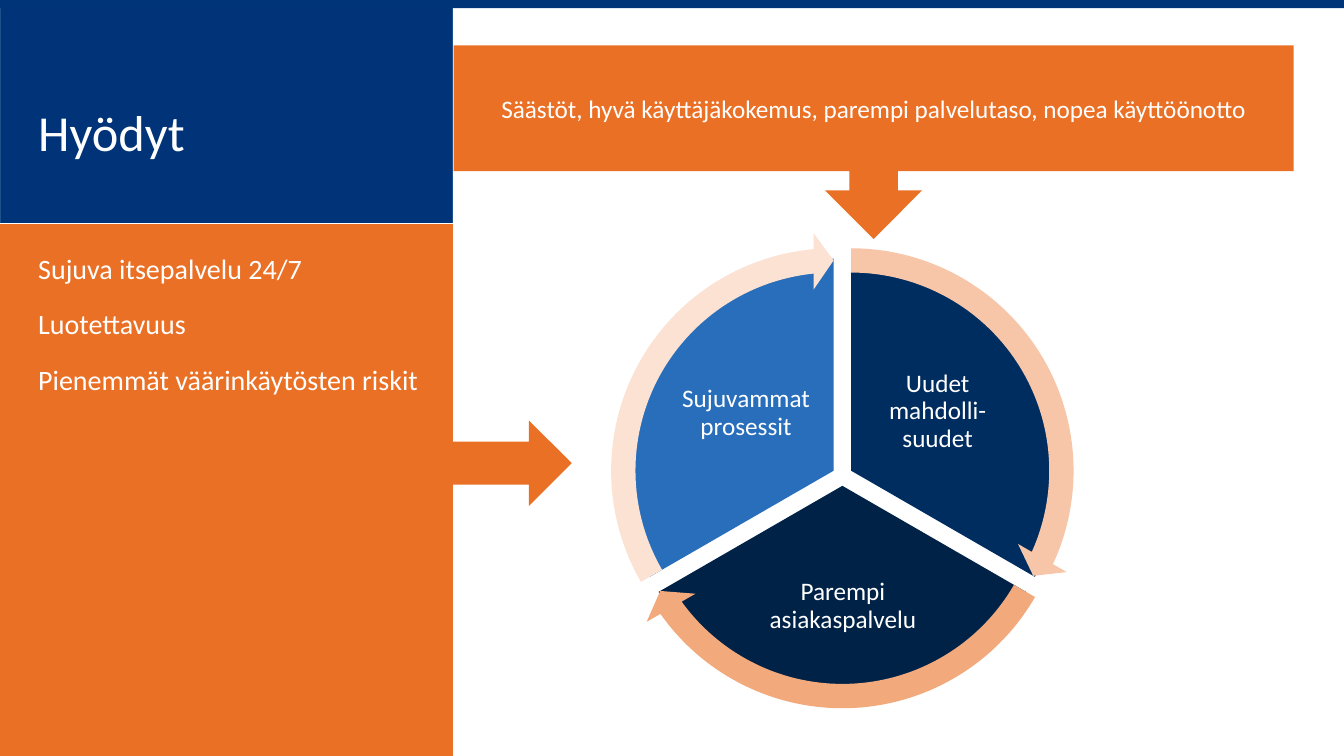
import dataclasses
import math
import typing

import lxml.etree
import pptx
import pptx.dml.color
import pptx.enum.shapes
import pptx.enum.text
import pptx.oxml.ns
import pptx.util

PRESET = pptx.enum.shapes.MSO_SHAPE
ALIGN = pptx.enum.text.PP_ALIGN
ANCHOR = pptx.enum.text.MSO_ANCHOR

SLIDE_WIDTH = pptx.util.Inches(13.33)
SLIDE_HEIGHT = pptx.util.Inches(7.5)
COLUMN = SLIDE_WIDTH / 133.3
ROW = SLIDE_HEIGHT / 75
SIDEBAR = 44.9
TITLE_ROWS = 22.2
WHEEL_COLUMN, WHEEL_ROW = 83.55, 47.2
SLICE_GAP = 1
SLICE_SIZE, ARROW_SIZE = 42.1, 47.3
SLICE_SWEEP = 120
ANGLE_UNIT = 0.6
RING_THICKNESS, HEAD_ANGLE, HEAD_WIDTH = 0.051, 3.275, 0.059


@dataclasses.dataclass(frozen=True)
class Theme:
    font: str = "Calibri"
    title_size: int = 36
    body_size: int = 20
    label_size: int = 18
    line_width: int = 1
    white: str = "FFFFFF"
    navy: str = "003378"
    navy_edge: str = "1E518A"
    top_band: str = "003479"
    orange: str = "EA7025"


THEME = Theme()


class Area(typing.NamedTuple):
    column: float
    row: float
    columns: float
    rows: float


class Panel(typing.NamedTuple):
    preset: PRESET
    area: Area
    fill: str
    line: typing.Optional[str] = None


class Writing(typing.NamedTuple):
    lines: tuple[str, ...]
    size: int
    align: ALIGN = ALIGN.LEFT
    anchor: ANCHOR = ANCHOR.TOP
    spacing: float = 0.9
    insets: tuple[float, float, float, float] = (0.1, 0.05, 0.1, 0.05)


class Slice(typing.NamedTuple):
    label: str
    label_area: Area
    label_insets: tuple[float, float, float, float]
    start: int
    fill: str
    arrow_fill: str


SIDE_PANELS = (
    Panel(PRESET.RECTANGLE, Area(0, 0, SIDEBAR, TITLE_ROWS), THEME.navy, THEME.navy_edge),
    Panel(PRESET.RECTANGLE, Area(0, TITLE_ROWS, SIDEBAR, 75 - TITLE_ROWS), THEME.orange, THEME.orange),
)
TOP_BAND = Panel(PRESET.RECTANGLE, Area(0, 0, 133.3, 0.8), THEME.top_band)
CALLOUT = Panel(PRESET.DOWN_ARROW_CALLOUT, Area(45, 4.5, 83.3, 19.2), THEME.orange)
SIDE_ARROW = Panel(PRESET.RIGHT_ARROW, Area(42.5, 41.7, 14.2, 8.5), THEME.orange)

SLICES = (
    Slice("Uudet mahdolli-suudet", Area(85.5, 34.6, 15, 12.5), (0, 0, 0, 0),
          270, "002D5F", "F7C6A8"),
    Slice("Parempi asiakaspalvelu", Area(72.5, 54.5, 22.5, 11), (0, 0.03, 0.03, 0),
          30, "002247", "F2A97C"),
    Slice("Sujuvammat prosessit", Area(66.5, 34.6, 15, 12.5), (0.03, 0.03, 0.03, 0),
          150, "296EBB", "FBE2D3"),
)


def colour(code: str) -> pptx.dml.color.RGBColor:
    return pptx.dml.color.RGBColor.from_string(code)


def place(area: Area) -> tuple[int, int, int, int]:
    return (round(area.column * COLUMN), round(area.row * ROW),
            round(area.columns * COLUMN), round(area.rows * ROW))


def draw_panel(page, panel: Panel, adjustments: tuple[float, ...] = ()):
    shape = page.shapes.add_shape(panel.preset, *place(panel.area))
    shape.shadow.inherit = False
    shape.fill.solid()
    shape.fill.fore_color.rgb = colour(panel.fill)
    if panel.line:
        shape.line.color.rgb = colour(panel.line)
        shape.line.width = pptx.util.Pt(THEME.line_width)
    else:
        shape.line.fill.background()
    for index, value in enumerate(adjustments):
        shape.adjustments[index] = value
    return shape


def write(shape, writing: Writing) -> None:
    box = shape.text_frame
    box.word_wrap = True
    box.vertical_anchor = writing.anchor
    box.margin_left, box.margin_top, box.margin_right, box.margin_bottom = map(
        pptx.util.Inches, writing.insets)
    for index, line in enumerate(writing.lines):
        para = box.add_paragraph() if index else box.paragraphs[0]
        para.alignment = writing.align
        para.line_spacing = writing.spacing
        if index:
            para.space_before = pptx.util.Pt(12)
        if len(writing.lines) > 1:
            para.space_after = pptx.util.Pt(6)
        span = para.add_run()
        span.text = line
        span.font.name = THEME.font
        span.font.size = pptx.util.Pt(writing.size)
        span.font.color.rgb = colour(THEME.white)


def draw_text(page, area: Area, writing: Writing) -> None:
    write(page.shapes.add_textbox(*place(area)), writing)


def draw_divider(page) -> None:
    height = round(TITLE_ROWS * ROW)
    divider = page.shapes.add_connector(
        pptx.enum.shapes.MSO_CONNECTOR.STRAIGHT, 0, height, round(45.3 * COLUMN), height)
    divider.line.color.rgb = colour(THEME.white)
    divider.line.width = pptx.util.Pt(THEME.line_width)
    lxml.etree.SubElement(divider._element.spPr, pptx.oxml.ns.qn("a:effectLst"))


def wheel_area(piece: Slice, size: float) -> Area:
    middle = math.radians(piece.start + SLICE_SWEEP / 2)
    return Area(WHEEL_COLUMN + SLICE_GAP * math.cos(middle) - size / 2,
                WHEEL_ROW + SLICE_GAP * math.sin(middle) - size / 2, size, size)


def draw_wheel(page) -> None:
    for piece in SLICES:
        start = piece.start * ANGLE_UNIT
        end = (piece.start + SLICE_SWEEP) % 360 * ANGLE_UNIT
        draw_panel(page, Panel(PRESET.PIE, wheel_area(piece, SLICE_SIZE), piece.fill), (start, end))
        draw_text(page, piece.label_area, Writing(
            (piece.label,), THEME.label_size, ALIGN.CENTER, ANCHOR.MIDDLE,
            insets=piece.label_insets))
    for piece in SLICES:
        start = piece.start * ANGLE_UNIT
        end = (piece.start + SLICE_SWEEP) % 360 * ANGLE_UNIT
        draw_panel(page, Panel(PRESET.CIRCULAR_ARROW, wheel_area(piece, ARROW_SIZE), piece.arrow_fill),
                   (RING_THICKNESS, HEAD_ANGLE, end - HEAD_ANGLE, start, HEAD_WIDTH))


def main() -> None:
    deck = pptx.Presentation()
    deck.slide_width, deck.slide_height = SLIDE_WIDTH, SLIDE_HEIGHT
    page = deck.slides.add_slide(deck.slide_layouts[6])
    for panel in SIDE_PANELS:
        draw_panel(page, panel)
    draw_divider(page)
    draw_panel(page, TOP_BAND)
    draw_text(page, Area(2.8, 24.8, 39.8, 46.9), Writing(
        ("Sujuva itsepalvelu 24/7", "Luotettavuus", "Pienemmät väärinkäytösten riskit"),
        THEME.body_size))
    draw_text(page, Area(2.8, 6.5, 39.8, 13.8), Writing(
        ("Hyödyt",), THEME.title_size, anchor=ANCHOR.MIDDLE))
    write(draw_panel(page, CALLOUT), Writing(
        ("Säästöt, hyvä käyttäjäkokemus, parempi palvelutaso, nopea käyttöönotto",),
        THEME.label_size, ALIGN.CENTER, ANCHOR.MIDDLE, 1.0))
    draw_wheel(page)
    draw_panel(page, SIDE_ARROW)
    deck.save("out.pptx")


if __name__ == "__main__":
    main()
